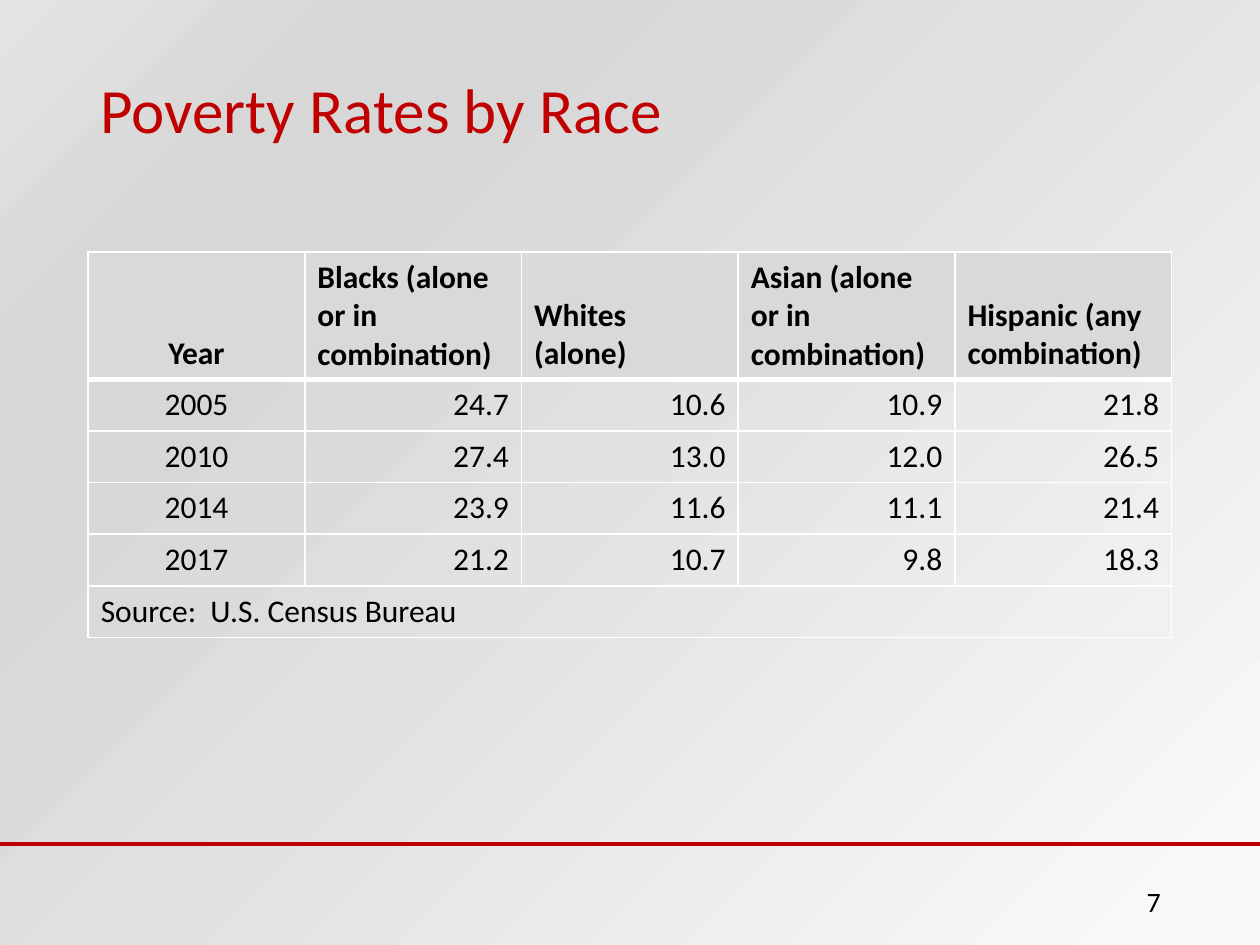
from dataclasses import dataclass
from typing import NamedTuple

from lxml.etree import SubElement
from pptx import Presentation
from pptx.dml.color import RGBColor
from pptx.enum.shapes import MSO_CONNECTOR
from pptx.enum.text import MSO_ANCHOR, PP_ALIGN
from pptx.oxml import parse_xml
from pptx.oxml.ns import nsdecls, qn
from pptx.slide import Slide
from pptx.table import _Cell
from pptx.text.text import TextFrame
from pptx.util import Inches, Pt


@dataclass(frozen=True)
class Theme:
    font: str = "Calibri"
    accent: str = "C00000"
    text: str = "000000"
    header_fill: str = "D9D9D9"
    border: str = "FFFFFF"
    title_size: int = 36
    table_size: int = 18
    number_size: int = 16
    background: tuple = ((0, "FAFAFA"), (74, "D7D7D7"), (83, "D7D7D7"), (100, "E4E4E4"))


class PovertyRates(NamedTuple):
    year: str
    blacks: str
    whites: str
    asian: str
    hispanic: str


THEME = Theme()
HEADINGS = PovertyRates(
    "Year",
    "Blacks (alone or in combination)",
    "Whites (alone)",
    "Asian (alone or in combination)",
    "Hispanic (any combination)",
)
RATES = [
    PovertyRates("2005", "24.7", "10.6", "10.9", "21.8"),
    PovertyRates("2010", "27.4", "13.0", "12.0", "26.5"),
    PovertyRates("2014", "23.9", "11.6", "11.1", "21.4"),
    PovertyRates("2017", "21.2", "10.7", "9.8", "18.3"),
]
SOURCE = "Source:  U.S. Census Bureau"
COLUMN_WIDTH, HEADER_HEIGHT, ROW_HEIGHT = 1.72, 1.01, 0.41


def write_text(frame: TextFrame, text: str, *, size: int, color: str = THEME.text,
               bold: bool = False, align: PP_ALIGN = PP_ALIGN.LEFT,
               line_spacing: float = 1.0) -> None:
    paragraph = frame.paragraphs[0]
    paragraph.alignment = align
    paragraph.line_spacing = line_spacing
    run = paragraph.add_run()
    run.text = text
    run.font.name = THEME.font
    run.font.size = Pt(size)
    run.font.bold = bold
    run.font.color.rgb = RGBColor.from_string(color)


def add_text_box(slide: Slide, left: float, top: float, width: float, height: float,
                 text: str, **text_format) -> None:
    shape = slide.shapes.add_textbox(Inches(left), Inches(top), Inches(width), Inches(height))
    shape.text_frame.word_wrap = True
    shape.text_frame.vertical_anchor = MSO_ANCHOR.MIDDLE
    write_text(shape.text_frame, text, **text_format)


def set_background(slide: Slide) -> None:
    """Fill the slide with a circular gradient centred on the bottom right corner."""
    slide.background.fill.solid()
    properties = slide.element.find(".//" + qn("p:bgPr"))
    stops = "".join(
        f'<a:gs pos="{position * 1000}"><a:srgbClr val="{color}"/></a:gs>'
        for position, color in THEME.background
    )
    gradient = parse_xml(
        f'<a:gradFill {nsdecls("a")} rotWithShape="1"><a:gsLst>{stops}</a:gsLst>'
        '<a:path path="circle"><a:fillToRect l="100000" t="100000"/></a:path></a:gradFill>'
    )
    properties.replace(properties[0], gradient)


def set_borders(cell: _Cell, *, top: int = 1, bottom: int = 1) -> None:
    """Draw the four sides; the lines have to come before the cell's fill."""
    properties = cell._tc.get_or_add_tcPr()
    for index, (side, width) in enumerate(
        (("lnL", 1), ("lnR", 1), ("lnT", top), ("lnB", bottom))
    ):
        line = parse_xml(
            f'<a:{side} {nsdecls("a")} w="{Pt(width)}"><a:solidFill>'
            f'<a:srgbClr val="{THEME.border}"/></a:solidFill></a:{side}>'
        )
        properties.insert(index, line)


def add_rates_table(slide: Slide, left: float, top: float) -> None:
    rows = [HEADINGS, *RATES, (SOURCE, "", "", "", "")]
    columns = len(HEADINGS)
    height = HEADER_HEIGHT + ROW_HEIGHT * (len(rows) - 1)
    table = slide.shapes.add_table(
        len(rows), columns, Inches(left), Inches(top),
        Inches(COLUMN_WIDTH * columns), Inches(height),
    ).table
    table.first_row = table.horz_banding = False
    for column in table.columns:
        column.width = Inches(COLUMN_WIDTH)

    last = len(rows) - 1
    for row_index, values in enumerate(rows):
        is_header = row_index == 0
        table.rows[row_index].height = Inches(HEADER_HEIGHT if is_header else ROW_HEIGHT)
        for column_index, value in enumerate(values):
            cell = table.cell(row_index, column_index)
            if is_header:
                cell.fill.solid()
                cell.fill.fore_color.rgb = RGBColor.from_string(THEME.header_fill)
                cell.vertical_anchor = MSO_ANCHOR.BOTTOM
            else:
                cell.fill.background()
            set_borders(cell, top=3 if row_index == 1 else 1, bottom=3 if is_header else 1)
            if not value:
                continue
            if row_index == last or (is_header and column_index > 0):
                align = PP_ALIGN.LEFT
            else:
                align = PP_ALIGN.RIGHT if column_index else PP_ALIGN.CENTER
            write_text(cell.text_frame, value, size=THEME.table_size,
                       bold=is_header, align=align)
    table.cell(last, 0).merge(table.cell(last, columns - 1))


def add_footer_line(slide: Slide, top: float, width: float) -> None:
    line = slide.shapes.add_connector(
        MSO_CONNECTOR.STRAIGHT, Inches(0), Inches(top), Inches(width), Inches(top)
    )
    line.line.color.rgb = RGBColor.from_string(THEME.accent)
    line.line.width = Pt(2)
    SubElement(line._element.spPr, qn("a:effectLst"))


def main() -> None:
    presentation = Presentation()
    presentation.slide_width, presentation.slide_height = Inches(10), Inches(7.5)
    slide = presentation.slides.add_slide(presentation.slide_layouts[6])
    set_background(slide)
    add_text_box(slide, 0.7, 0.3, 8.6, 1.2, "Poverty Rates by Race",
                 size=THEME.title_size, color=THEME.accent, line_spacing=0.9)
    add_rates_table(slide, 0.7, 2)
    add_footer_line(slide, 6.7, 10)
    add_text_box(slide, 7.06, 6.95, 2.25, 0.4, "7",
                 size=THEME.number_size, align=PP_ALIGN.RIGHT)
    presentation.save("out.pptx")


if __name__ == "__main__":
    main()
